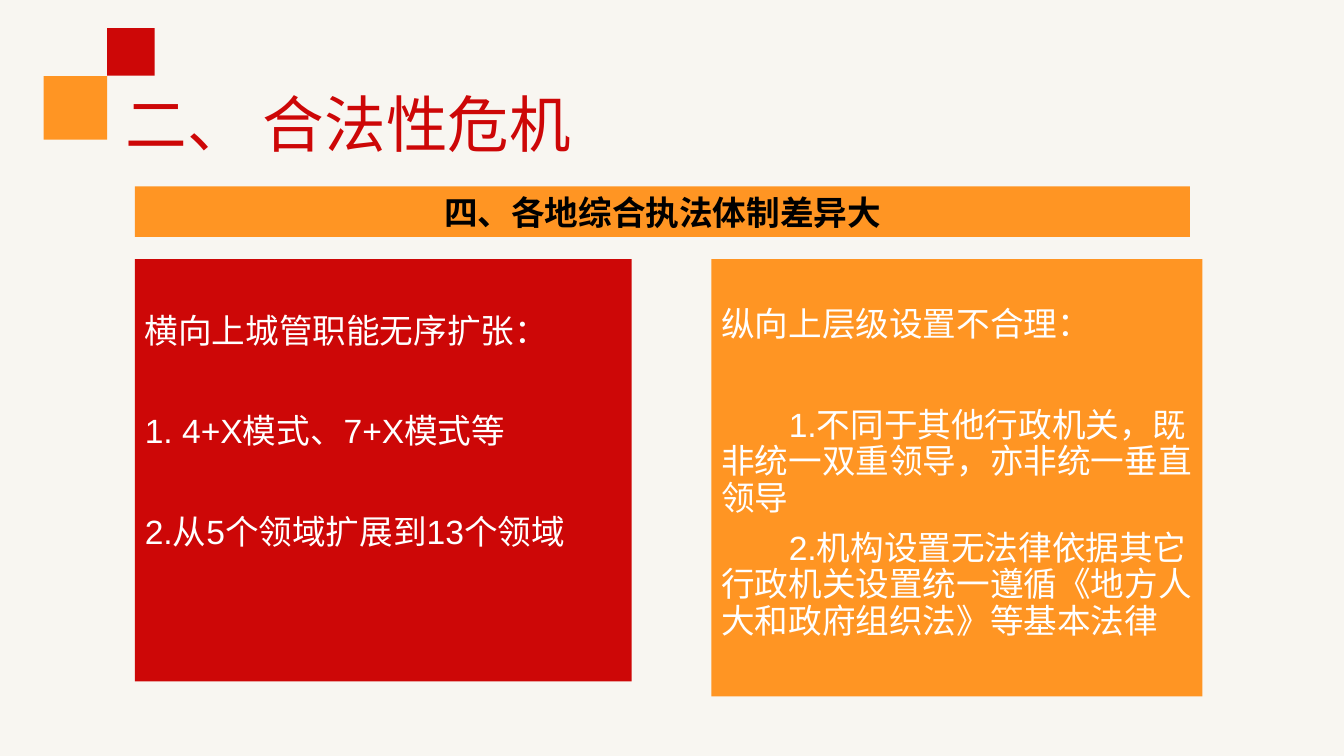
from dataclasses import dataclass

from pptx import Presentation
from pptx.dml.color import RGBColor
from pptx.enum.shapes import MSO_SHAPE
from pptx.enum.text import MSO_ANCHOR, MSO_AUTO_SIZE, PP_ALIGN
from pptx.util import Cm, Pt

RECTANGLE = MSO_SHAPE.RECTANGLE
TOP, MIDDLE = MSO_ANCHOR.TOP, MSO_ANCHOR.MIDDLE
LEFT, CENTER = PP_ALIGN.LEFT, PP_ALIGN.CENTER
NO_AUTOFIT = MSO_AUTO_SIZE.NONE


@dataclass(frozen=True)
class Theme:
    background: RGBColor = RGBColor(0xF8, 0xF6, 0xF1)
    red: RGBColor = RGBColor(0xCD, 0x07, 0x07)
    orange: RGBColor = RGBColor(0xFF, 0x95, 0x23)
    white: RGBColor = RGBColor(0xFF, 0xFF, 0xFF)
    black: RGBColor = RGBColor(0, 0, 0)
    font: str = "Arial"
    heading_font: str = "Noto Sans CJK SC"
    title_size: int = 44
    body_size: int = 24
    paragraph_gap: int = 10
    section_gap: int = 46


THEME = Theme()


def write_text(paragraph, text, *, color, size=THEME.body_size, font=THEME.font,
               bold=False, align=LEFT, line_spacing=0.9, before=0, indent=0):
    paragraph.alignment = align
    paragraph.line_spacing = line_spacing
    paragraph.space_before = Pt(before)
    if indent:
        properties = paragraph._p.get_or_add_pPr()
        properties.set("marL", "0")
        properties.set("indent", str(Cm(indent)))
    run = paragraph.add_run()
    run.text = text
    run.font.name = font
    run.font.size = Pt(size)
    run.font.bold = bold
    run.font.color.rgb = color


def add_block(slide, box, color):
    shape = slide.shapes.add_shape(RECTANGLE, *(Cm(length) for length in box))
    shape.shadow.inherit = False
    shape.fill.solid()
    shape.fill.fore_color.rgb = color
    shape.line.fill.background()
    return shape


def add_corner_squares(slide, box):
    left, top, width, height = box
    small = 1.2
    large = width - small
    add_block(slide, (left, top + height - large, large, large), THEME.orange)
    add_block(slide, (left + large, top, small, small), THEME.red)


def add_title(slide, box, text):
    title = slide.shapes.title
    title.left, title.top, title.width, title.height = (Cm(length) for length in box)
    frame = title.text_frame
    frame.auto_size = NO_AUTOFIT
    frame.vertical_anchor = MIDDLE
    write_text(frame.paragraphs[0], text, color=THEME.red, size=THEME.title_size)


def add_heading_bar(slide, box, text):
    frame = add_block(slide, box, THEME.orange).text_frame
    frame.vertical_anchor = MIDDLE
    write_text(frame.paragraphs[0], text, color=THEME.black, bold=True,
               font=THEME.heading_font, align=CENTER, line_spacing=1.0)


def add_panel(slide, box, color, top_margin, items):
    frame = add_block(slide, box, color).text_frame
    frame.word_wrap = True
    frame.vertical_anchor = TOP
    frame.margin_top = Cm(top_margin)
    for index, (text, before, indent) in enumerate(items):
        paragraph = frame.add_paragraph() if index else frame.paragraphs[0]
        write_text(paragraph, text, color=THEME.white, before=before, indent=indent)


def build_slide(presentation):
    slide = presentation.slides.add_slide(presentation.slide_layouts[5])
    slide.background.fill.solid()
    slide.background.fill.fore_color.rgb = THEME.background

    add_corner_squares(slide, (1.1, 0.71, 2.8, 2.81))
    add_title(slide, (2.92, 1.75, 28.63, 2.95), "二、 合法性危机")

    left, panel_top = 3.4, 6.53
    gap, section = THEME.paragraph_gap, THEME.section_gap
    add_panel(slide, (left, panel_top, 12.52, 10.64), THEME.red, 1.39, [
        ("横向上城管职能无序扩张：", gap, 0),
        ("1. 4+X模式、7+X模式等", section, 0),
        ("2.从5个领域扩展到13个领域", section, 0),
    ])
    add_panel(slide, (17.93, panel_top, 12.37, 11.02), THEME.orange, 1.23, [
        ("纵向上层级设置不合理：", gap, 0),
        ("1.不同于其他行政机关，既非统一双重领导，亦非统一垂直领导", section, 1.7),
        ("2.机构设置无法律依据其它行政机关设置统一遵循《地方人大和政府组织法》等基本法律",
         gap, 1.7),
    ])
    add_heading_bar(slide, (left, 4.7, 26.59, 1.27), "四、各地综合执法体制差异大")


def main():
    presentation = Presentation()
    presentation.slide_width = Cm(33.87)
    presentation.slide_height = Cm(19.05)
    build_slide(presentation)
    presentation.save("out.pptx")


if __name__ == "__main__":
    main()
